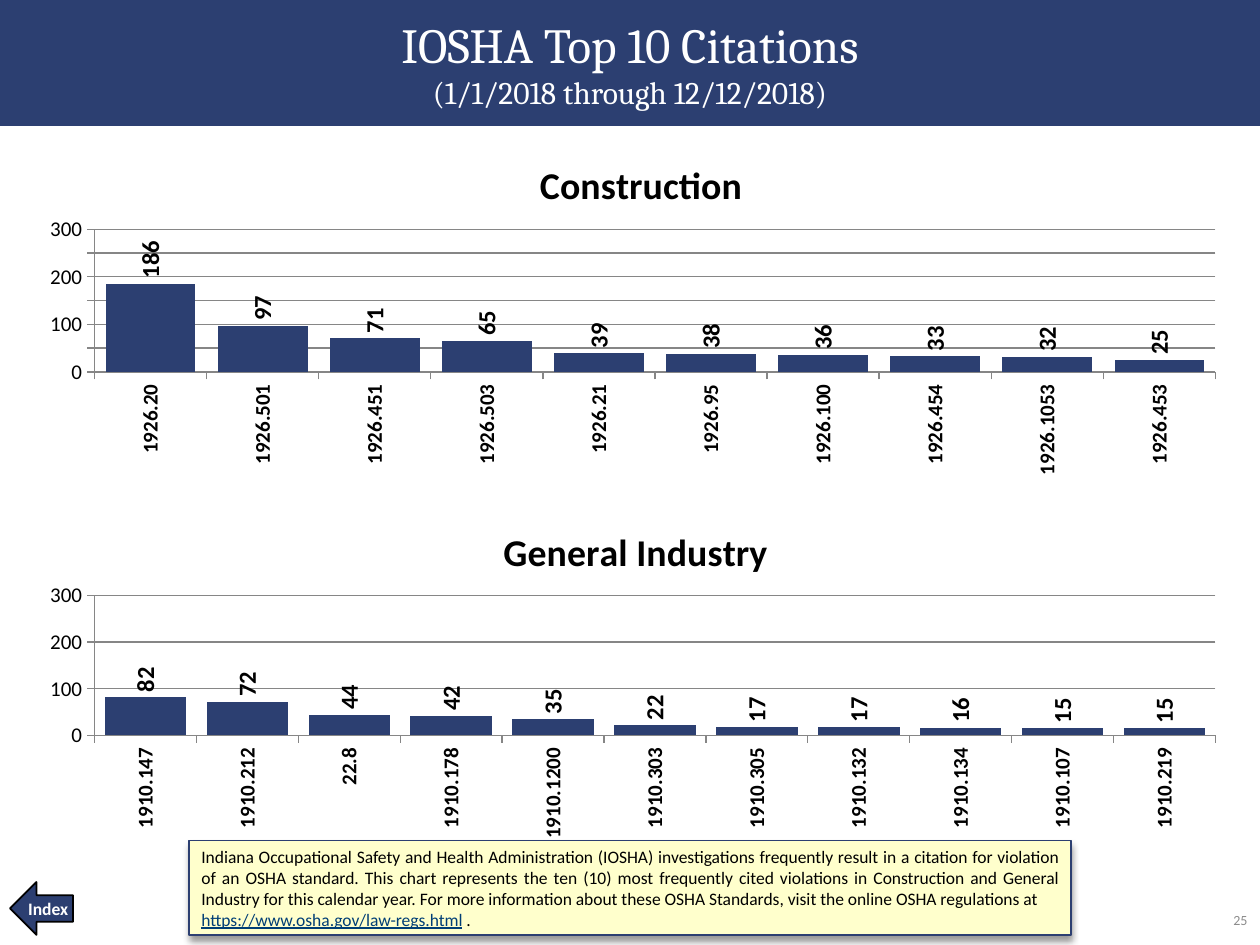
from lxml import etree
from pptx import Presentation
from pptx.chart.data import CategoryChartData
from pptx.dml.color import RGBColor
from pptx.enum.chart import XL_CHART_TYPE, XL_LABEL_POSITION, XL_TICK_MARK
from pptx.enum.shapes import MSO_SHAPE
from pptx.enum.text import MSO_ANCHOR, PP_ALIGN
from pptx.oxml import parse_xml
from pptx.oxml.ns import nsdecls, qn
from pptx.util import Inches, Pt

COLUMN = XL_CHART_TYPE.COLUMN_CLUSTERED
OUTSIDE_END = XL_LABEL_POSITION.OUTSIDE_END
TICK_OUT = XL_TICK_MARK.OUTSIDE
RECTANGLE, LEFT_ARROW = MSO_SHAPE.RECTANGLE, MSO_SHAPE.LEFT_ARROW
MIDDLE = MSO_ANCHOR.MIDDLE
CENTER, RIGHT, JUSTIFY = PP_ALIGN.CENTER, PP_ALIGN.RIGHT, PP_ALIGN.JUSTIFY

COLORS = {name: RGBColor.from_string(value) for name, value in {
    "navy": "2C3F71", "white": "FFFFFF", "black": "000000", "cream": "FFFFCC",
    "link": "003E75", "number": "8C8C8C", "grid": "868686"}.items()}
UPWARD = "-5400000"


def add_text(paragraph, text, size, color, font="Calibri", align=None):
    """Add one run; align the paragraph if asked."""
    if align is not None:
        paragraph.alignment = align
    run = paragraph.add_run()
    run.text = text
    run.font.name, run.font.size = font, Pt(size)
    run.font.color.rgb = COLORS[color]
    return run


def set_layout(parent, position, target=None, **shares):
    """Place a chart part by shares of the chart's size."""
    for old in parent.findall(qn("c:layout")):
        parent.remove(old)
    layout = etree.Element(qn("c:layout"))
    manual = etree.SubElement(layout, qn("c:manualLayout"))
    if target:
        etree.SubElement(manual, qn("c:layoutTarget")).set("val", target)
    for axis in "xy":
        etree.SubElement(manual, qn(f"c:{axis}Mode")).set("val", "edge")
    for name, share in shares.items():
        etree.SubElement(manual, qn(f"c:{name}")).set("val", str(share))
    parent.insert(position, layout)


presentation = Presentation()
presentation.slide_width, presentation.slide_height = Inches(10), Inches(7.5)
slide = presentation.slides.add_slide(presentation.slide_layouts[6])

# Filled shapes: banner, index arrow, note
shapes = {}
for name, preset, box, fill, line, width in [
    ("banner", RECTANGLE, (0, 0, 10, 1), "navy", None, 0),
    ("index", LEFT_ARROW, (0.08, 7, 0.5, 0.42), "navy", "black", 1),
    ("note", RECTANGLE, (1.5, 6.67, 7, 0.75), "cream", "navy", 0.75),
]:
    shape = slide.shapes.add_shape(preset, *map(Inches, box))
    shape.shadow.inherit = False
    shape.fill.solid()
    shape.fill.fore_color.rgb = COLORS[fill]
    if line:
        shape.line.color.rgb = COLORS[line]
        shape.line.width = Pt(width)
    else:
        shape.line.fill.background()
    shape.text_frame.vertical_anchor = MIDDLE
    shape.text_frame.word_wrap = True
    shapes[name] = shape

banner = shapes["banner"].text_frame
add_text(banner.paragraphs[0], "IOSHA Top 10 Citations", 28, "white", "Cambria", CENTER)
add_text(banner.add_paragraph(), "(1/1/2018 through 12/12/2018)", 18, "white", "Cambria", CENTER)

index = shapes["index"].text_frame
index.margin_left = index.margin_right = index.margin_top = index.margin_bottom = 0
index.word_wrap = False
add_text(index.paragraphs[0], "Index", 10, "white", align=CENTER).font.bold = True

note = shapes["note"].text_frame
add_text(note.paragraphs[0],
         "Indiana Occupational Safety and Health Administration (IOSHA) investigations "
         "frequently result in a citation for violation of an OSHA standard. This chart "
         "represents the ten (10) most frequently cited violations in Construction and "
         "General Industry for this calendar year. For more information about these OSHA "
         "Standards, visit the online OSHA regulations at", 10, "black", align=JUSTIFY)
address = note.add_paragraph()
add_text(address, "https://www.osha.gov/law-regs.html", 10, "link", align=JUSTIFY).font.underline = True
add_text(address, " .", 10, "black")
effects = shapes["note"]._element.spPr.find(qn("a:effectLst"))
effects.append(parse_xml(
    f'<a:outerShdw {nsdecls("a")} blurRad="{Pt(4)}" dist="{Pt(3)}" dir="5400000" rotWithShape="0">'
    '<a:srgbClr val="000000"><a:alpha val="40000"/></a:srgbClr></a:outerShdw>'))

number = slide.shapes.add_textbox(*map(Inches, (9.67, 7.1, 0.33, 0.4))).text_frame
number.word_wrap = True
number.vertical_anchor = MIDDLE
add_text(number.paragraphs[0], "25", 8, "number", align=RIGHT)

# Charts: title, title left share, top, height, grid step, citations by standard
for title, title_left, top, height, step, citations in [
    ("General Industry", 0.39, 3.92, 2.78, 100, [
        ("1910.147", 82), ("1910.212", 72), ("22.8", 44), ("1910.178", 42),
        ("1910.1200", 35), ("1910.303", 22), ("1910.305", 17), ("1910.132", 17),
        ("1910.134", 16), ("1910.107", 15), ("1910.219", 15)]),
    ("Construction", 0.42, 1, 2.83, 50, [
        ("1926.20", 186), ("1926.501", 97), ("1926.451", 71), ("1926.503", 65),
        ("1926.21", 39), ("1926.95", 38), ("1926.100", 36), ("1926.454", 33),
        ("1926.1053", 32), ("1926.453", 25)]),
]:
    data = CategoryChartData()
    data.categories = [standard for standard, _ in citations]
    data.add_series("Series 1", [count for _, count in citations])
    chart = slide.shapes.add_chart(
        COLUMN, *map(Inches, (0.17, top, 9.67, height)), data).chart
    chart.has_legend = False
    chart.font.name, chart.font.size = "Calibri", Pt(18)
    chart.font.color.rgb = COLORS["black"]

    heading = chart.chart_title
    add_text(heading.text_frame.paragraphs[0], title, 21.6, "black").font.bold = True
    set_layout(heading._element, 1, x=title_left, y=0.07)
    set_layout(chart._chartSpace.chart.plotArea, 0, "inner", x=0.06, y=0.29, w=0.92, h=0.4)

    values, categories = chart.value_axis, chart.category_axis
    values.minimum_scale, values.maximum_scale, values.major_unit = 0, 300, step
    values.major_gridlines.format.line.color.rgb = COLORS["grid"]
    for axis in (values, categories):
        axis.major_tick_mark = TICK_OUT
        axis.tick_labels.font.size = Pt(12)
        axis.format.line.color.rgb = COLORS["grid"]
    categories.tick_labels.font.bold = True

    plot = chart.plots[0]
    plot.gap_width, plot.overlap, plot.vary_by_categories = 25, 100, False
    fill = plot.series[0].format.fill
    fill.solid()
    fill.fore_color.rgb = COLORS["navy"]
    labels = plot.series[0].data_labels
    labels.show_value, labels.position = True, OUTSIDE_END
    labels.font.size, labels.font.bold = Pt(14), True
    for element in (categories._element, labels._element):
        body = element.find(qn("c:txPr")).find(qn("a:bodyPr"))
        body.set("rot", UPWARD)
        body.set("vert", "horz")

presentation.save("out.pptx")
